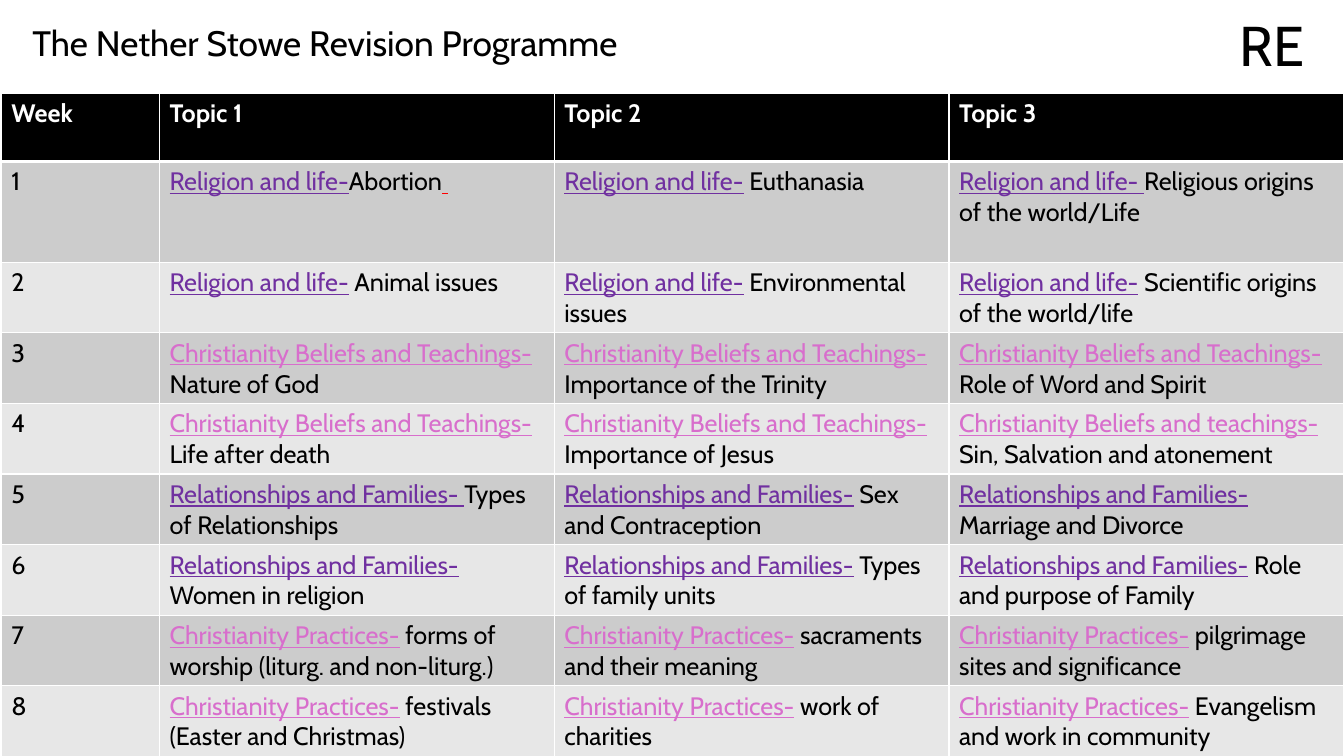
from lxml.etree import SubElement
from pptx import Presentation
from pptx.dml.color import RGBColor
from pptx.enum.text import MSO_ANCHOR, MSO_AUTO_SIZE, PP_ALIGN
from pptx.oxml.ns import qn
from pptx.util import Inches, Pt

BLACK, WHITE, RED = "000000", "FFFFFF", "FF0000"
PURPLE, PINK = "7030A0", "D86ECC"
BANDS = "CCCCCC", "E7E7E7"

HEADINGS = ["Week", "Topic 1", "Topic 2", "Topic 3"]
# Each topic continues its theme; the first bar ends the underlined part,
# and a second bar starts an underlined tail.
WEEKS = [
    ("Religion and life", PURPLE,
     ["-|Abortion| ", "-| Euthanasia",
      "- |Religious origins of the world/Life"]),
    ("Religion and life", PURPLE,
     ["-| Animal issues", "-| Environmental issues",
      "-| Scientific origins of the world/life"]),
    ("Christianity Beliefs and ", PINK,
     ["Teachings- |Nature of God", "Teachings-| Importance of the Trinity",
      "Teachings- |Role of Word and Spirit"]),
    ("Christianity Beliefs and ", PINK,
     ["Teachings- |Life after death", "Teachings- |Importance of Jesus",
      "teachings- |Sin, Salvation and atonement"]),
    ("Relationships and Families", PURPLE,
     ["- |Types of Relationships", "-| Sex and Contraception",
      "- |Marriage and Divorce"]),
    ("Relationships and Families", PURPLE,
     ["- |Women in religion", "-| Types of family units",
      "-| Role and purpose of Family"]),
    ("Christianity Practices", PINK,
     ["-| forms of worship (liturg. and non-liturg.)",
      "-| sacraments and their meaning",
      "-| pilgrimage sites and significance"]),
    ("Christianity Practices", PINK,
     ["-| festivals (Easter and Christmas)", "-| work of charities",
      "-| Evangelism and work in community"]),
]


def colour(value):
    return RGBColor.from_string(value)


def set_all(target, values):
    for name, value in values.items():
        setattr(target, name, value)


class Timetable:
    """Holds the deck, its page and the text style."""

    font = "Cabin"
    body_size = 18

    def __init__(self, width, height):
        self.deck = Presentation()
        set_all(self.deck, {"slide_width": Inches(width),
                            "slide_height": Inches(height)})
        self.page = self.deck.slides.add_slide(self.deck.slide_layouts[5])

    def place(self, left, top, width, height):
        """Turn shares of the slide's size into lengths."""
        across, down = self.deck.slide_width, self.deck.slide_height
        return (int(left * across), int(top * down),
                int(width * across), int(height * down))

    def span(self, para, text, ink=BLACK, size=body_size, **format_values):
        span = para.add_run()
        span.text = text
        set_all(span.font, {"name": self.font, "size": Pt(size),
                            **format_values})
        span.font.color.rgb = colour(ink)

    def title(self, text, area, size):
        box = self.page.shapes.title
        set_all(box, dict(zip(("left", "top", "width", "height"),
                              self.place(*area))))
        set_all(box.text_frame, {"vertical_anchor": MSO_ANCHOR.MIDDLE,
                                 "word_wrap": True,
                                 "auto_size": MSO_AUTO_SIZE.NONE})
        para = box.text_frame.paragraphs[0]
        set_all(para, {"alignment": PP_ALIGN.LEFT, "line_spacing": 0.9})
        self.span(para, text, size=size)

    def label(self, text, area, size):
        box = self.page.shapes.add_textbox(*self.place(*area))
        set_all(box.text_frame, {"word_wrap": True,
                                 "auto_size": MSO_AUTO_SIZE.SHAPE_TO_FIT_TEXT})
        para = box.text_frame.paragraphs[0]
        para.alignment = PP_ALIGN.RIGHT
        self.span(para, text, size=size)

    def grid(self, area, column_shares, row_shares):
        """Add an empty table whose columns and rows share out its area."""
        left, top, width, height = self.place(*area)
        table = self.page.shapes.add_table(
            len(row_shares), len(column_shares),
            left, top, width, height).table
        for column, share in zip(table.columns, column_shares):
            column.width = int(width * share / sum(column_shares))
        for row, share in zip(table.rows, row_shares):
            row.height = int(height * share / sum(row_shares))
        return table

    def cell(self, cell, fill, top=1, bottom=1):
        """Fill and rule a cell, and return its paragraph."""
        properties = cell._tc.get_or_add_tcPr()
        for side, points in (("L", 1), ("R", 1), ("T", top), ("B", bottom)):
            line = SubElement(properties, qn(f"a:ln{side}"), w=str(Pt(points)))
            paint = SubElement(line, qn("a:solidFill"))
            SubElement(paint, qn("a:srgbClr"), val=WHITE)
        cell.fill.solid()
        cell.fill.fore_color.rgb = colour(fill)
        return cell.text_frame.paragraphs[0]

    def topic(self, para, theme, ink, topic):
        inks = ink, BLACK, RED
        parts = (theme + topic).split("|")
        for index, (part, part_ink) in enumerate(zip(parts, inks)):
            self.span(para, part, part_ink, bold=False,
                      underline=index != 1)


def main():
    timetable = Timetable(13.33, 7.5)
    timetable.title("The Nether Stowe Revision Programme",
                    (0.0165, 0.03, 0.86, 0.06), 25.2)
    timetable.label("RE", (0.751, 0.008, 0.227, 0.103), 40)

    table = timetable.grid((0.001, 0.123, 0.999, 0.877),
                           [1.57] + [3.92] * 3, [0.68, 1] + [0.7] * 7)
    for column, heading in enumerate(HEADINGS):
        para = timetable.cell(table.cell(0, column), BLACK, bottom=3)
        timetable.span(para, heading, WHITE, bold=True)
    for week, (theme, ink, topics) in enumerate(WEEKS, 1):
        band = BANDS[(week - 1) % 2]
        top = 3 if week == 1 else 1
        number = timetable.cell(table.cell(week, 0), band, top)
        timetable.span(number, str(week), bold=False)
        for column, topic in enumerate(topics, 1):
            para = timetable.cell(table.cell(week, column), band, top)
            timetable.topic(para, theme, ink, topic)

    timetable.deck.save("out.pptx")


if __name__ == "__main__":
    main()
